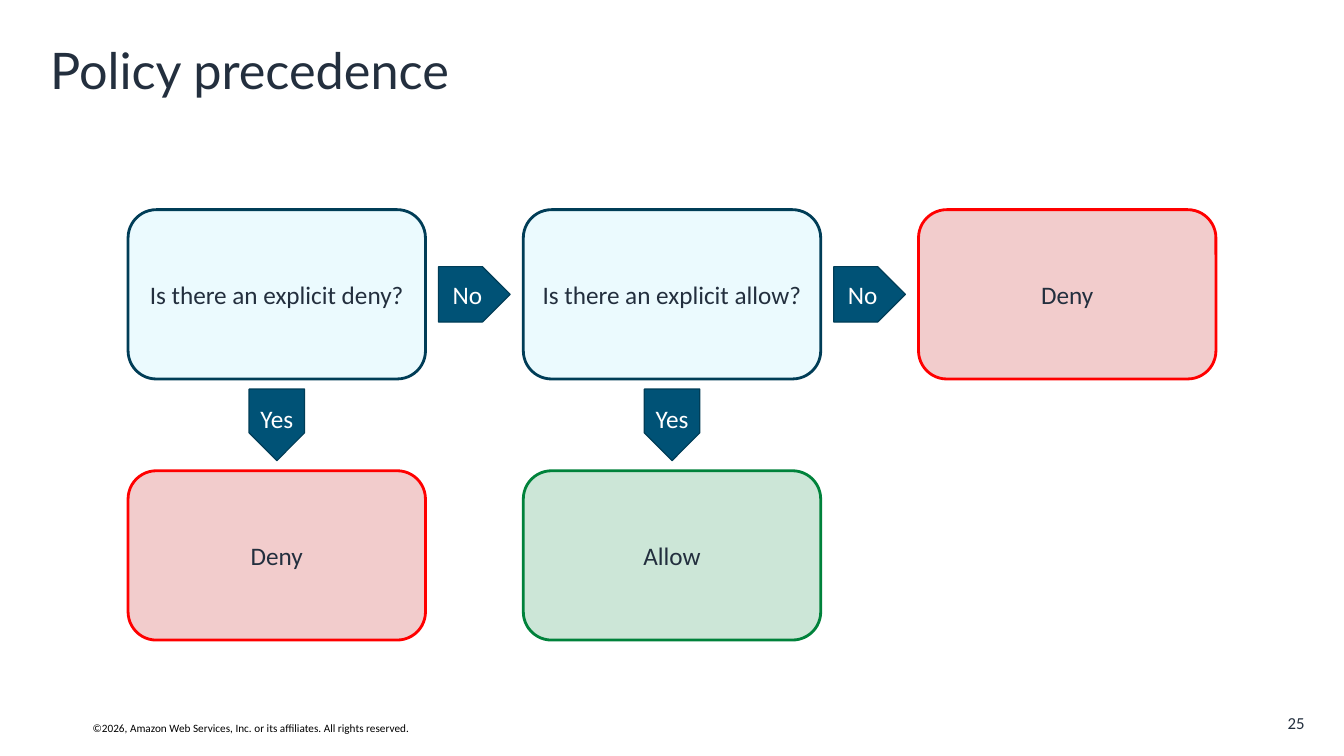
from dataclasses import dataclass

import pptx
import pptx.dml.color
import pptx.enum.shapes
import pptx.enum.text
import pptx.oxml.ns
import pptx.util
from lxml import etree

RGB = pptx.dml.color.RGBColor
Shape = pptx.enum.shapes.MSO_SHAPE
Align = pptx.enum.text.PP_ALIGN
Anchor = pptx.enum.text.MSO_ANCHOR
Inches = pptx.util.Inches

INK = RGB(0x23, 0x2F, 0x3E)
BLACK = RGB(0x00, 0x00, 0x00)
WHITE = RGB(0xFF, 0xFF, 0xFF)
NAVY = RGB(0x00, 0x3D, 0x57)
TEAL = RGB(0x00, 0x52, 0x76)
SKY = RGB(0xA4, 0xE9, 0xFC)
RED = RGB(0xFF, 0x00, 0x00)
WINE = RGB(0xC0, 0x00, 0x00)
GREEN = RGB(0x00, 0x82, 0x3B)

# Grid in inches: first box, box size, distance between boxes
LEFT, TOP = 1.27, 2.08
BOX_W, BOX_H = 2.95, 1.68
STEP_X, STEP_Y = 3.92, 2.59
TAG_W, TAG_H = 0.71, 0.55


@dataclass
class Style:
    fill: RGB
    line: RGB
    alpha: int  # percent


@dataclass
class Box:
    text: str
    col: int
    row: int
    style: Style


@dataclass
class Tag:
    text: str
    col: int
    down: bool


ASK = Style(SKY, NAVY, 21)
DENY = Style(WINE, RED, 20)
ALLOW = Style(GREEN, GREEN, 20)
SOLID = Style(TEAL, NAVY, 100)

BOXES = [
    Box("Is there an explicit deny?", 0, 0, ASK),
    Box("Is there an explicit allow?", 1, 0, ASK),
    Box("Deny", 2, 0, DENY),
    Box("Deny", 0, 1, DENY),
    Box("Allow", 1, 1, ALLOW),
]
TAGS = [Tag(text, col, down) for col in (0, 1) for text, down in (("No", False), ("Yes", True))]


def write(shape, text: str, size: float, color: RGB, align=Align.CENTER,
          font: str = "Calibri", wrap: bool = True, anchor=Anchor.MIDDLE):
    frame = shape.text_frame
    frame.text = text
    frame.word_wrap = wrap
    frame.vertical_anchor = anchor
    par = frame.paragraphs[0]
    par.alignment = align
    face = par.runs[0].font
    face.name, face.size, face.color.rgb = font, pptx.util.Pt(size), color
    return frame


def add_block(slide, kind, mid_x: float, mid_y: float, width: float, height: float,
              style: Style, weight: float):
    """Add a filled shape around its centre point."""
    block = slide.shapes.add_shape(kind, Inches(mid_x - width / 2), Inches(mid_y - height / 2),
                                   Inches(width), Inches(height))
    block.shadow.inherit = False
    block.fill.solid()
    block.fill.fore_color.rgb = style.fill
    block.line.color.rgb = style.line
    block.line.width = pptx.util.Pt(weight)
    if style.alpha < 100:
        tint = block.element.spPr.find(pptx.oxml.ns.qn("a:solidFill"))[0]
        etree.SubElement(tint, pptx.oxml.ns.qn("a:alpha"), val=str(style.alpha * 1000))
    return block


def middle(col: float, row: float) -> tuple[float, float]:
    return LEFT + BOX_W / 2 + col * STEP_X, TOP + BOX_H / 2 + row * STEP_Y


def draw_box(slide, box: Box) -> None:
    block = add_block(slide, Shape.ROUNDED_RECTANGLE, *middle(box.col, box.row),
                      BOX_W, BOX_H, box.style, 2)
    write(block, box.text, 18, INK)


def draw_tag(slide, tag: Tag) -> None:
    # A tag sits halfway between two neighbouring boxes
    spot = middle(tag.col, 0.5) if tag.down else middle(tag.col + 0.5, 0)
    block = add_block(slide, Shape.PENTAGON, *spot, TAG_W, TAG_H, SOLID, 0.85)
    write(block, tag.text, 18, WHITE, wrap=False)
    if tag.down:
        block.rotation = 90
        block.element.txBody.bodyPr.set("vert", "vert270")


def add_text(slide, left: float, top: float, width: float, height: float):
    return slide.shapes.add_textbox(Inches(left), Inches(top), Inches(width), Inches(height))


def main() -> None:
    deck = pptx.Presentation()
    deck.slide_width, deck.slide_height = Inches(13.33), Inches(7.5)
    slide = deck.slides.add_slide(deck.slide_layouts[6])

    # Footer
    write(add_text(slide, 0.82, 7.11, 3.74, 0.24),
          "©2026, Amazon Web Services, Inc. or its affiliates. All rights reserved.",
          8, BLACK, Align.LEFT, wrap=False, anchor=Anchor.TOP)
    page = write(add_text(slide, 12.41, 7.05, 0.53, 0.25), "25", 12, INK, Align.RIGHT)
    page.margin_left = page.margin_right = page.margin_top = page.margin_bottom = 0

    # Title
    title = write(add_text(slide, 0.4, 0.33, 12.54, 0.8), "Policy precedence",
                  36, INK, Align.LEFT, "Lato")
    title.paragraphs[0].line_spacing = 0.9

    # Decision flow
    for box in BOXES:
        draw_box(slide, box)
    for tag in TAGS:
        draw_tag(slide, tag)

    deck.save("out.pptx")


if __name__ == "__main__":
    main()
